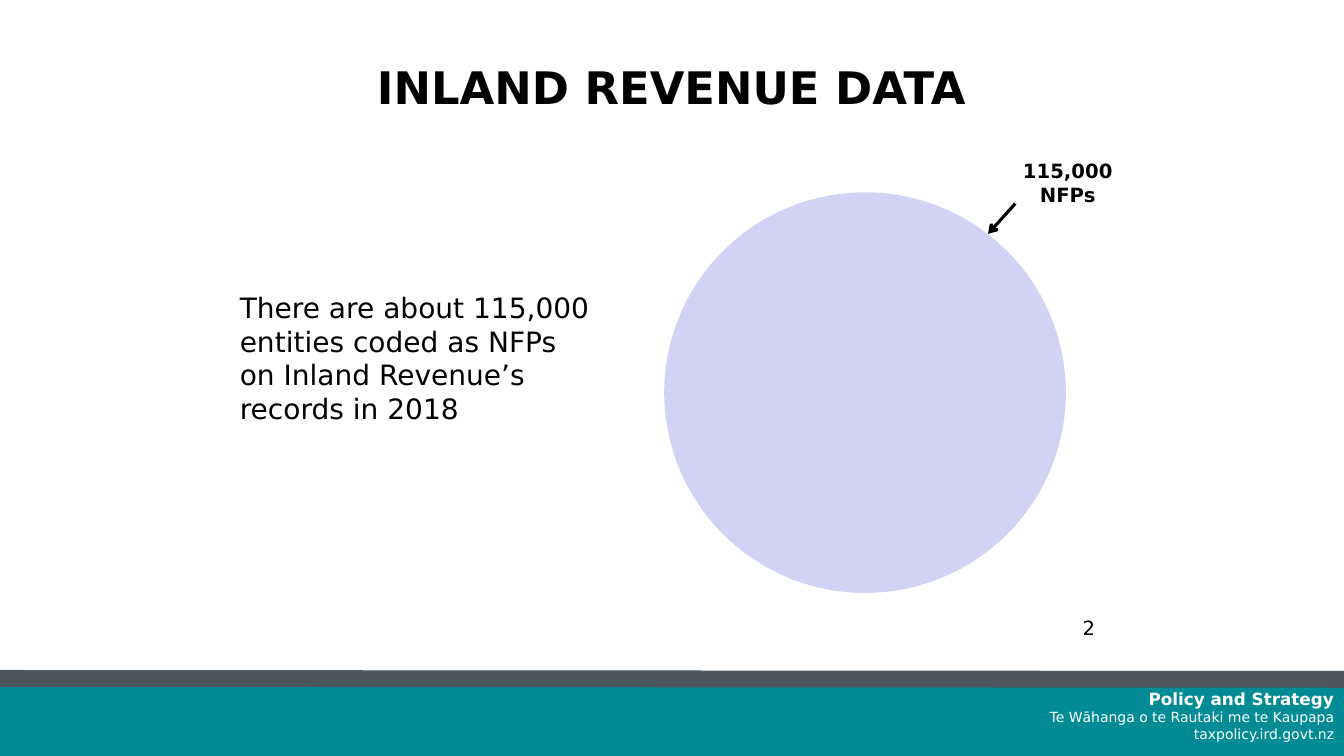
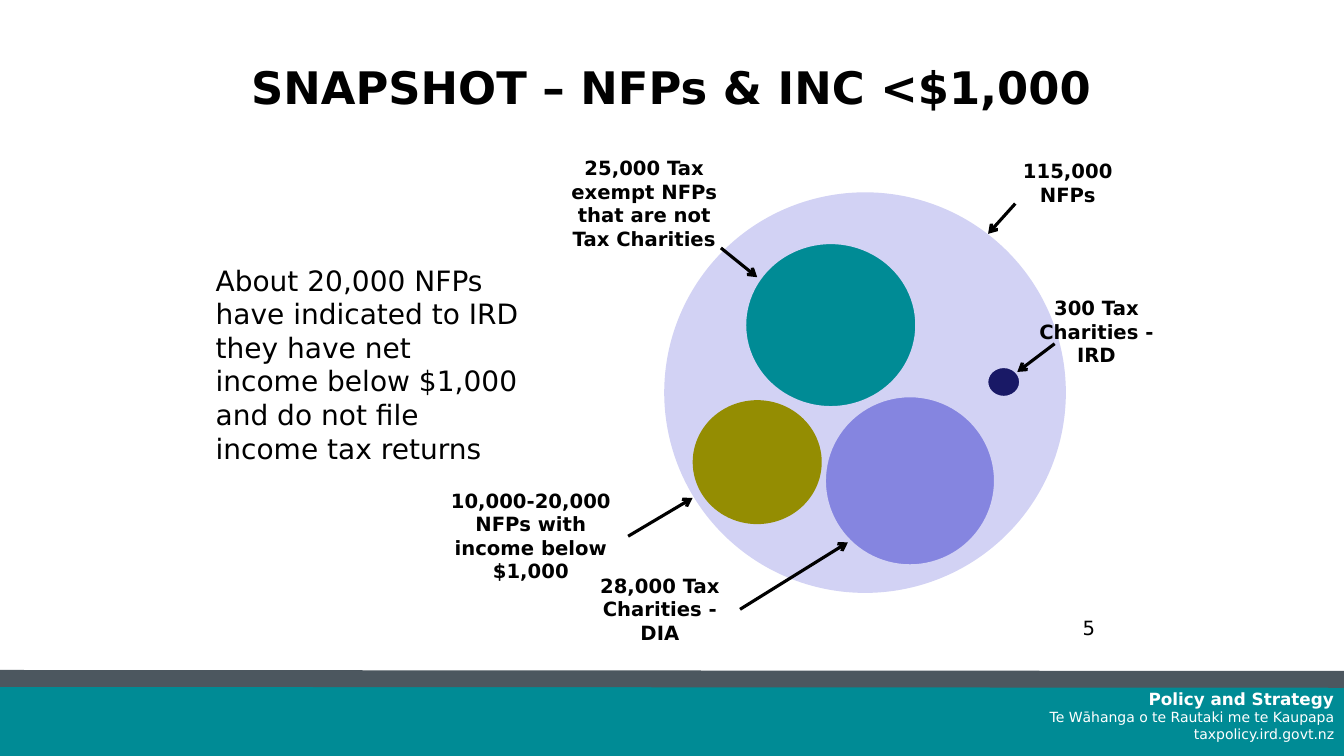
"""Builds two slides on not-for-profit entities in Inland Revenue's records."""
from dataclasses import dataclass
from typing import Optional

from lxml import etree
from pptx import Presentation
from pptx.dml.color import RGBColor
from pptx.enum.shapes import MSO_CONNECTOR, MSO_SHAPE
from pptx.enum.text import MSO_ANCHOR, PP_ALIGN
from pptx.oxml.ns import qn
from pptx.util import Inches, Pt

STRAIGHT = MSO_CONNECTOR.STRAIGHT
RECTANGLE, OVAL = MSO_SHAPE.RECTANGLE, MSO_SHAPE.OVAL
LEFT, CENTER, RIGHT = PP_ALIGN.LEFT, PP_ALIGN.CENTER, PP_ALIGN.RIGHT
TOP, MIDDLE = MSO_ANCHOR.TOP, MSO_ANCHOR.MIDDLE
RIGHT_SIDE = 3

FONT = "DejaVu Sans"
COLORS = {
    "text": "000000",
    "footer_text": "FFFFFF",
    "teal": "008B95",
    "slate": "4C575F",
    "lavender": "D2D2F4",
    "violet": "8585E0",
    "navy": "191966",
    "olive": "948D02",
}
WIDTH, HEIGHT = 13.33, 7.5
TITLE_BOX = (1.82, 0.4, 9.68, 0.92)
NUMBER_BOX = (10.64, 6.06, 0.64, 0.34)
FOOTER_BOX = (0, 6.81, WIDTH, 0.69)
DIAGRAM_BOX = (6.63, 1.95, 3.9, 3.89)


@dataclass
class Callout:
    """A label with an arrow and an optional circle, relative to the diagram."""
    text: str
    label: tuple
    arrow_from: tuple
    arrow_to: tuple
    circle: Optional[tuple] = None
    color: str = ""
    outlined: bool = True
    joined: bool = False


ALL_NFPS = Callout("115,000 NFPs", (3.27, -0.42, 1.38, 0.57), (3.44, 0.07), (3.17, 0.37))
GROUPS = [
    Callout("28,000 Tax Charities - DIA", (-0.88, 3.69, 1.59, 0.81), (0.71, 4.09),
            (1.78, 3.43), (1.52, 1.95, 1.75, 1.74), "violet", joined=True),
    Callout("25,000 Tax exempt NFPs that are not Tax Charities", (-1.12, -0.45, 1.76, 1.04),
            (0.52, 0.51), (0.88, 0.8), (0.73, 0.43, 1.76, 1.69), "teal"),
    Callout("300 Tax Charities - IRD", (3.44, 0.94, 1.61, 0.81), (3.83, 1.46),
            (3.46, 1.74), (3.13, 1.66, 0.39, 0.36), "navy"),
    Callout("10,000-20,000 NFPs with income below $1,000", (-2.33, 2.85, 1.93, 1.04),
            (-0.4, 3.37), (0.24, 2.99), (0.24, 2.02, 1.28, 1.23), "olive",
            outlined=False, joined=True),
]


def rgb(name):
    """Return the named palette colour."""
    return RGBColor.from_string(COLORS[name])


def inches(values):
    """Convert numbers to lengths."""
    return [Inches(value) for value in values]


def offset(box, part):
    """Shift a part's position by the corner of its box."""
    return (box[0] + part[0], box[1] + part[1], *part[2:])


def write(frame, lines, align=LEFT, anchor=TOP, color="text"):
    """Fill a frame with one paragraph per (text, size, bold) line."""
    frame.word_wrap = True
    frame.vertical_anchor = anchor
    for index, (text, size, bold) in enumerate(lines):
        paragraph = frame.add_paragraph() if index else frame.paragraphs[0]
        paragraph.alignment = align
        run = paragraph.add_run()
        run.text = text
        run.font.name = FONT
        run.font.size = Pt(size)
        run.font.bold = bold
        run.font.color.rgb = rgb(color)


def add_text(slide, box, lines, **style):
    """Add a text box and return it."""
    text_box = slide.shapes.add_textbox(*inches(box))
    write(text_box.text_frame, lines, **style)
    return text_box


def add_solid(slide, preset, box, color, outline=None):
    """Add a filled shape with an optional 6 pt outline."""
    solid = slide.shapes.add_shape(preset, *inches(box))
    solid.shadow.inherit = False
    solid.fill.solid()
    solid.fill.fore_color.rgb = rgb(color)
    if outline:
        solid.line.color.rgb = rgb(outline)
        solid.line.width = Pt(6)
    else:
        solid.line.fill.background()


def add_line(slide, start, end, color, width, arrow=False):
    """Add a straight line, with an arrowhead at its end if asked."""
    line = slide.shapes.add_connector(STRAIGHT, *inches((*start, *end)))
    line.line.color.rgb = rgb(color)
    line.line.width = Pt(width)
    if arrow:
        etree.SubElement(line.line._get_or_add_ln(), qn("a:tailEnd"), type="arrow")
    etree.SubElement(line._element.spPr, qn("a:effectLst"))
    return line


def add_footer(slide, box):
    """Draw the teal band, its slate edge and the contact lines."""
    left, top, width, _ = box
    add_solid(slide, RECTANGLE, box, "teal")
    add_line(slide, (left, top - 0.08), (left + width, top - 0.07), "slate", 12)
    contact = [
        ("Policy and Strategy", 12, True),
        ("Te Wāhanga o te Rautaki me te Kaupapa", 10, False),
        ("taxpolicy.ird.govt.nz", 10, False),
    ]
    add_text(slide, (left + width - 4.43, top - 0.03, 4.43, 0.89), contact,
             align=RIGHT, color="footer_text")


def add_callout(slide, box, callout):
    """Draw one callout relative to the diagram box."""
    if callout.circle:
        add_solid(slide, OVAL, offset(box, callout.circle), callout.color,
                  "lavender" if callout.outlined else None)
    label = add_text(slide, offset(box, callout.label), [(callout.text, 14, True)], align=CENTER)
    arrow = add_line(slide, offset(box, callout.arrow_from), offset(box, callout.arrow_to),
                     "text", 2.25, arrow=True)
    if callout.joined:
        arrow.begin_connect(label, RIGHT_SIDE)


def add_diagram(slide, box, callouts):
    """Draw the circle of all entities and its callouts."""
    add_solid(slide, OVAL, box, "lavender", "lavender")
    for callout in callouts:
        add_callout(slide, box, callout)


def add_data_slide(deck, title, number, statement, statement_box, callouts):
    """Add a slide with a statement on the left and the diagram on the right."""
    slide = deck.slides.add_slide(deck.slide_layouts[5])
    heading = slide.shapes.title
    heading.left, heading.top, heading.width, heading.height = inches(TITLE_BOX)
    write(heading.text_frame, [(title, 32, True)], align=CENTER, anchor=MIDDLE)
    add_footer(slide, FOOTER_BOX)
    add_text(slide, NUMBER_BOX, [(number, 14, False)])
    add_text(slide, statement_box, [(statement, 20, False)], anchor=MIDDLE)
    add_diagram(slide, DIAGRAM_BOX, callouts)


def main():
    """Build and save the deck."""
    deck = Presentation()
    deck.slide_width, deck.slide_height = inches((WIDTH, HEIGHT))
    add_data_slide(
        deck, "INLAND REVENUE DATA", "2",
        "There are about 115,000 entities coded as NFPs on Inland Revenue’s records in 2018",
        (2.28, 1.12, 3.76, 4.86), [ALL_NFPS])
    add_data_slide(
        deck, "SNAPSHOT – NFPs & INC <$1,000", "5",
        "About 20,000 NFPs have indicated to IRD they have net income below $1,000 "
        "and do not file income tax returns",
        (2.04, 1.18, 3.24, 4.86), [ALL_NFPS, *GROUPS])
    deck.save("out.pptx")


if __name__ == "__main__":
    main()
